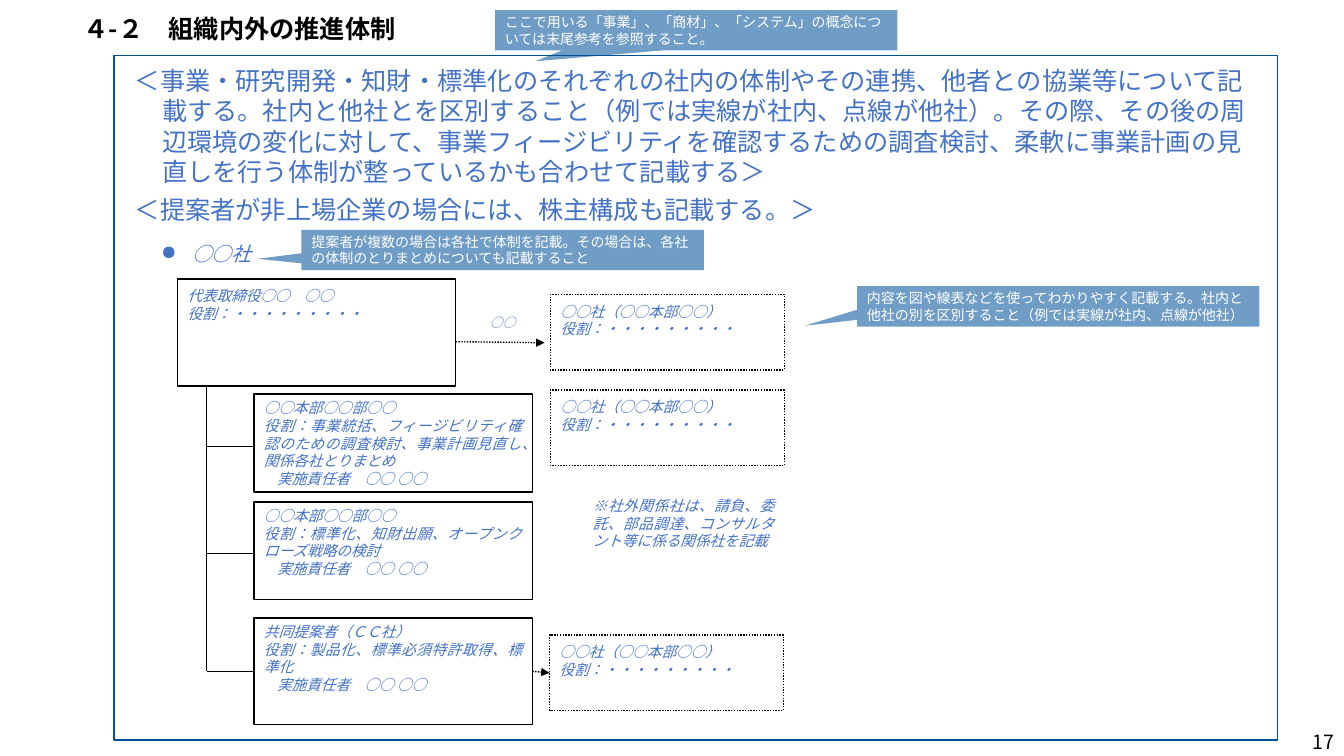
from lxml import etree
from pptx import Presentation
from pptx.dml.color import RGBColor
from pptx.enum.dml import MSO_LINE
from pptx.enum.lang import MSO_LANGUAGE_ID
from pptx.enum.shapes import MSO_CONNECTOR, MSO_SHAPE
from pptx.enum.text import MSO_ANCHOR, MSO_AUTO_SIZE, PP_ALIGN
from pptx.oxml.ns import qn
from pptx.util import Pt

PX = 9144  # 100 px to the inch
BLUE = RGBColor(0x44, 0x72, 0xC4)
NAVY = RGBColor(0x00, 0x52, 0x98)
BLACK = RGBColor(0, 0, 0)
WHITE = RGBColor(255, 255, 255)
NOTO = "Noto Sans CJK JP"
TOP, MIDDLE = MSO_ANCHOR.TOP, MSO_ANCHOR.MIDDLE
LEFT, CENTER = PP_ALIGN.LEFT, PP_ALIGN.CENTER
RIGHT, JUSTIFY = PP_ALIGN.RIGHT, PP_ALIGN.JUSTIFY
RECT, CALLOUT = MSO_SHAPE.RECTANGLE, MSO_SHAPE.RECTANGULAR_CALLOUT
DOTTED = MSO_LINE.ROUND_DOT
LEFT_SIDE, RIGHT_SIDE = 1, 3
LEADING = 1.2

TITLE = "４-２　組織内外の推進体制"
PAGE_NUMBER = "17"
GUIDANCE = [
    "＜事業・研究開発・知財・標準化のそれぞれの社内の体制やその連携、他者との協業等について"
    "記載する。社内と他社とを区別すること（例では実線が社内、点線が他社）。その際、その後の周辺"
    "環境の変化に対して、事業フィージビリティを確認するための調査検討、柔軟に事業計画の見直しを"
    "行う体制が整っているかも合わせて記載する＞",
    "＜提案者が非上場企業の場合には、株主構成も記載する。＞",
]
COMPANY = "○○社"
CONTRACT = "○○"
PARTNER_NOTE = "※社外関係社は、請負、委託、部品調達、コンサルタント等に係る関係社を記載"
PRESIDENT = ["代表取締役○○　○○", "役割：・・・・・・・・・"]
PARTNER = ["○○社（○○本部○○）", "役割：・・・・・・・・・"]
MANAGER = "実施責任者　○○ ○○"

# top, height, branch y, lines
DEPARTMENTS = [
    (391, 97, 443, ["○○本部○○部○○",
                    "役割：事業統括、フィージビリティ確認のための調査検討、事業計画見直し、関係各社とりまとめ"]),
    (498, 97, 549, ["○○本部○○部○○",
                    "役割：標準化、知財出願、オープンクローズ戦略の検討"]),
    (613, 106, 666, ["共同提案者（ＣＣ社）",
                     "役割：製品化、標準必須特許取得、標準化"]),
]
PARTNERS = [(546, 292), (546, 387), (545, 630)]  # left, top

# left, top, pointer, text
CALLOUTS = [
    (850, 284, (-0.63, 0.48),
     "内容を図や線表などを使ってわかりやすく記載する。社内と他社の別を区別すること（例では実線が社内、点線が他社）"),
    (299, 228, (-0.61, 0.22),
     "提案者が複数の場合は各社で体制を記載。その場合は、各社の体制のとりまとめについても記載すること"),
    (491, 10, (-0.4, 0.77),
     "ここで用いる「事業」、「商材」、「システム」の概念については末尾参考を参照すること。"),
]
TRUNK_X, DEPARTMENT_X, BOX_WIDTH = 205, 252, 276
PRESIDENT_TOP, PRESIDENT_HEIGHT = 277, 106
PARTNER_WIDTH, PARTNER_HEIGHT = 232, 75

deck = Presentation()
deck.slide_width, deck.slide_height = 1333 * PX, 750 * PX
page = deck.slides.add_slide(deck.slide_layouts[5])
shapes = page.shapes


def px(*lengths):
    return [length * PX for length in lengths]


def write(box, lines, size, color=BLUE, font=NOTO, align=JUSTIFY, anchor=TOP,
          inset_top=5, leading=LEADING, **style):
    """Fill a box with one paragraph per line; style holds further font values."""
    frame = box.text_frame
    frame_format = {"word_wrap": True, "auto_size": MSO_AUTO_SIZE.NONE, "vertical_anchor": anchor,
                    "margin_left": 10 * PX, "margin_right": 10 * PX,
                    "margin_top": inset_top * PX, "margin_bottom": 5 * PX}
    for name, value in frame_format.items():
        setattr(frame, name, value)
    font_format = {"name": font, "size": Pt(size),
                   "language_id": MSO_LANGUAGE_ID.JAPANESE, **style}
    for index, line in enumerate(lines):
        para = frame.add_paragraph() if index else frame.paragraphs[0]
        para.alignment = align
        para.line_spacing = Pt(size * leading) if leading > 1 else leading
        span = para.add_run()
        span.text = line
        for name, value in font_format.items():
            setattr(span.font, name, value)
        span.font.color.rgb = color
        etree.SubElement(span._r.get_or_add_rPr(), qn("a:ea"), typeface=NOTO)
    return frame.paragraphs


def indent(para, margin, first):
    properties = para._p.get_or_add_pPr()
    properties.set("marL", str(margin * PX))
    properties.set("indent", str(first * PX))
    return properties


def add_box(area, kind=RECT, fill=None, line=BLACK, dash=None):
    box = shapes.add_shape(kind, *px(*area))
    box.shadow.inherit = False
    if fill is None:
        box.fill.background()
    else:
        box.fill.solid()
        box.fill.fore_color.rgb = fill
    if line is None:
        box.line.fill.background()
    else:
        box.line.color.rgb = line
        box.line.width = Pt(1)
        box.line.dash_style = dash
    return box


def add_line(start, end, arrow=False):
    """Draw a plain thin line, or a dotted one with an arrowhead."""
    line = shapes.add_connector(MSO_CONNECTOR.STRAIGHT, *px(*start, *end))
    line.line.color.rgb = BLACK
    line.line.width = Pt(1 if arrow else 0.75)
    if arrow:
        line.line.dash_style = DOTTED
        etree.SubElement(line.line._get_or_add_ln(), qn("a:tailEnd"), type="triangle")
    etree.SubElement(line._element.spPr, qn("a:effectLst"))
    return line


def add_text(area, lines, size, **values):
    return write(shapes.add_textbox(*px(*area)), lines, size, **values)


title = shapes.title
title.left, title.top, title.width, title.height = px(73, 11, 1150, 38)
write(title, [TITLE], 18, color=BLACK, align=LEFT, anchor=MIDDLE, leading=0.9, bold=True)
add_text((1248, 721, 85, 29), [PAGE_NUMBER], 14, color=BLACK, align=RIGHT, anchor=MIDDLE)

for para in add_text((45, 60, 1221, 170), GUIDANCE, 18, align=LEFT):
    para.space_before = Pt(6)
    indent(para, 106, -27)
add_box((113, 55, 1154, 679), line=NAVY)

company = add_text((150, 235, 143, 34), [COMPANY], 14, italic=True)[0]
etree.SubElement(indent(company, 31, -31), qn("a:buChar"), char="●")

president = add_box((176, PRESIDENT_TOP, BOX_WIDTH, PRESIDENT_HEIGHT))
write(president, PRESIDENT, 10.5, inset_top=8, italic=True)

departments = []
for top, height, branch_y, lines in DEPARTMENTS:
    department = add_box((DEPARTMENT_X, top, BOX_WIDTH, height), fill=WHITE)
    indent(write(department, lines + [MANAGER], 10.5, italic=True)[-1], 0, 13)
    branch = add_line((TRUNK_X, branch_y), (DEPARTMENT_X, branch_y))
    if branch_y == top + height / 2:
        branch.end_connect(department, LEFT_SIDE)
    departments.append(department)
add_line((TRUNK_X, PRESIDENT_TOP + PRESIDENT_HEIGHT), (TRUNK_X, DEPARTMENTS[-1][2]))

partners = []
for left, top in PARTNERS:
    partner = add_box((left, top, PARTNER_WIDTH, PARTNER_HEIGHT), dash=DOTTED)
    write(partner, PARTNER, 10.5, inset_top=8, italic=True)
    partners.append(partner)

add_line((452, 339), (540, 340), arrow=True)
supply = add_line((528, 666), (545, 667), arrow=True)
supply.begin_connect(departments[-1], RIGHT_SIDE)
supply.end_connect(partners[-1], LEFT_SIDE)
add_text((453, 305, 91, 30), [CONTRACT], 9, align=CENTER, anchor=MIDDLE, italic=True)
add_text((578, 488, 200, 86), [PARTNER_NOTE], 10.5, italic=True)

for left, top, pointer, text in CALLOUTS:
    callout = add_box((left, top, 399, 40), kind=CALLOUT, fill=NAVY, line=None)
    callout.adjustments[0], callout.adjustments[1] = pointer
    tint = callout._element.spPr.find(qn("a:solidFill"))[0]
    etree.SubElement(tint, qn("a:alpha"), val="56000")
    write(callout, [text], 10, color=WHITE, font="Arial", align=LEFT, anchor=MIDDLE)

deck.save("out.pptx")
